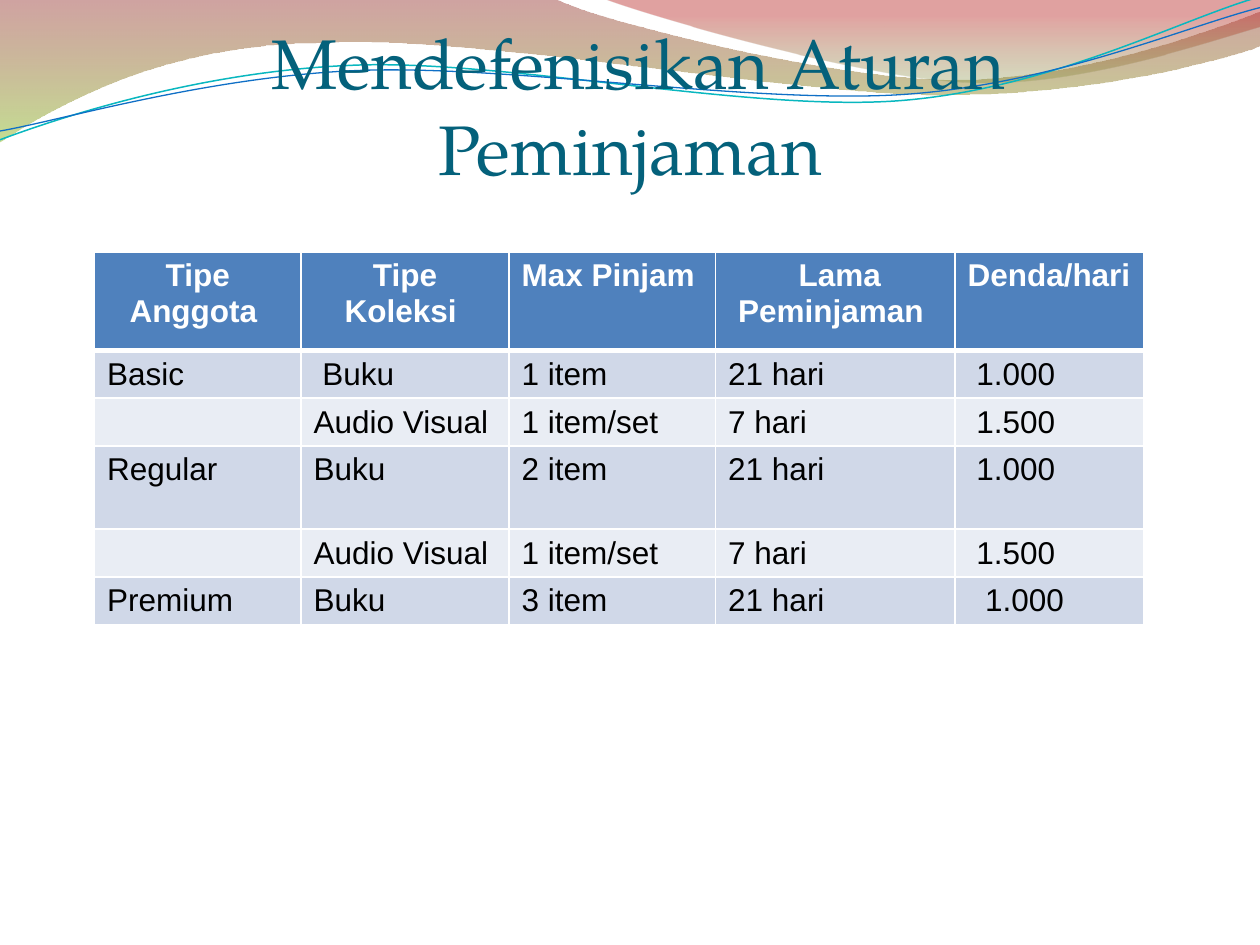
from math import cos, radians, sin
from pptx import Presentation
from pptx.dml.color import RGBColor
from pptx.enum.text import MSO_ANCHOR, PP_ALIGN
from pptx.oxml.ns import qn
from pptx.util import Inches, Pt
from lxml.etree import SubElement

HUES = {
    "title": "04617B", "head": "4F81BD", "odd": "D0D8E8", "even": "E9EDF4",
    "white": "FFFFFF", "black": "000000", "teal": "09B7BF", "blue": "0F6FC6",
    "brick": "973330", "lime": "95C238", "moss": "769537", "red": "BE3330",
}
BANDS = [
    ((-0.01, -0.01, 10.02, 1.14),
     [(0, 0), (4.4, -0.01), (4.76, 0.17, 6.63, 0.63, 7.58, 0.63),
      (8.53, 0.63, 9.58, 0.26, 10, 0.09), (10.01, 0.36),
      (9.83, 0.44, 8.7, 0.76, 7.46, 0.75), (6.22, 0.75, 3.82, 0.28, 2.57, 0.34),
      (1.29, 0.35, 0.46, 0.83, -0.01, 1.13), (0, 0)],
     [(0, "brick", 45), (1, "lime", 55)], 270),
    ((4.79, -0.01, 5.21, 0.7),
     [(4.79, -0.01), (5.09, 0.11, 6.82, 0.62, 7.69, 0.65),
      (8.55, 0.69, 9.61, 0.32, 10, 0.21), (10, 0), (4.79, -0.01)],
     [(0, "moss", 30), (0.8, "red", 45)], 90),
]
WAVES = [
    ((-0.02, 0.22, 10.02, 0.71),
     [(0, 1.11), (0.48, 0.93, 1.58, 0.57, 2.77, 0.52),
      (3.95, 0.46, 5.92, 0.89, 7.13, 0.8), (8.33, 0.71, 9.38, 0.15, 9.98, -0.02)],
     "teal", 0.85),
    ((-0.02, 0.3, 10.03, 0.58),
     [(0, 1.04), (0.47, 0.96, 1.64, 0.61, 2.83, 0.56),
      (4.03, 0.51, 5.97, 0.83, 7.17, 0.75), (8.36, 0.67, 9.41, 0.21, 10, 0.06)],
     "blue", 0.75),
]
TILT = 357.3
ROWS = [
    ["Tipe Anggota ", "Tipe Koleksi ", "Max Pinjam", " Lama Peminjaman ", "Denda/hari"],
    ["Basic", "Buku", "1 item", "21 hari", "1.000"],
    ["", "Audio Visual", "1 item/set", "7 hari", "1.500"],
    ["Regular", "Buku", "2 item", "21 hari", "1.000"],
    ["", "Audio Visual", "1 item/set", "7 hari", "1.500"],
    ["Premium", "Buku", "3 item", "21 hari", "1.000"],
]
WIDTHS = [1.64, 1.65, 1.64, 1.9, 1.5]
HEIGHTS = [0.78, 0.38, 0.38, 0.66, 0.38, 0.38]
CENTERED = {0, 1, 3}
INDENTS = {(1, 1): 0.17, (5, 4): 0.24, **{(row, 4): 0.17 for row in range(1, 5)}}


def hue(name):
    return RGBColor.from_string(HUES[name])


def turn(x, y, box, angle):
    left, top, width, height = box
    mid, waist = left + width / 2, top + height / 2
    c, s = cos(radians(angle)), sin(radians(angle))
    dx, dy = x - mid, y - waist
    return mid + dx * c - dy * s, waist + dx * s + dy * c


class Page:
    def __init__(self, slide):
        self.shapes = slide.shapes

    def style(self, run, font, size, color, bold=False):
        run.font.name = font
        run.font.size = Pt(size)
        run.font.bold = bold
        run.font.color.rgb = hue(color)

    def outline(self, box, path, tilt=0):
        left, top, width, height = box
        draft = self.shapes.build_freeform(0, 0)
        draft.add_line_segments([(Inches(width), Inches(height))], close=False)
        shape = draft.convert_to_shape()
        shape.left, shape.top = Inches(left), Inches(top)
        shape.rotation = tilt
        shape.shadow.inherit = False
        track = next(shape._element.iter(qn("a:path")))
        for node in list(track):
            track.remove(node)
        for i, part in enumerate(path):
            kind = "moveTo" if i == 0 else "lnTo" if len(part) == 2 else "cubicBezTo"
            node = SubElement(track, qn("a:" + kind))
            for x, y in zip(part[::2], part[1::2]):
                x, y = turn(x, y, box, -tilt)
                SubElement(node, qn("a:pt"), x=str(Inches(x - left)),
                           y=str(Inches(y - top)))
        if path[0] == path[-1]:
            SubElement(track, qn("a:close"))
        return shape

    def band(self, box, path, stops, angle):
        shape = self.outline(box, path)
        shape.line.fill.background()
        shape.fill.gradient()
        shape.fill.gradient_angle = angle
        for stop, (place, color, _) in zip(shape.fill.gradient_stops, stops):
            stop.position = place
            stop.color.rgb = hue(color)
        tints = shape._element.spPr.iter(qn("a:srgbClr"))
        for tint, (_, _, alpha) in zip(list(tints), stops):
            SubElement(tint, qn("a:alpha"), val=str(alpha * 1000))

    def wave(self, box, path, color, width):
        shape = self.outline(box, path, TILT)
        shape.fill.background()
        shape.line.color.rgb = hue(color)
        shape.line.width = Pt(width)

    def title(self, text, left, top, width, height):
        box = self.shapes.add_textbox(
            Inches(left), Inches(top), Inches(width), Inches(height))
        frame = box.text_frame
        frame.word_wrap = True
        frame.vertical_anchor = MSO_ANCHOR.BOTTOM
        frame.margin_left = frame.margin_right = frame.margin_bottom = 0
        frame.margin_top = Inches(0.05)
        para = frame.paragraphs[0]
        para.text = " "
        para.alignment = PP_ALIGN.CENTER
        self.style(para.runs[0], "Calibri", 44, "title")
        run = para.add_run()
        run.text = text
        self.style(run, "TeX Gyre Pagella", 40, "title")

    def border(self, cell):
        props = cell._tc.get_or_add_tcPr()
        for side in "LRTB":
            width = 3 if side == "B" else 1
            line = SubElement(props, qn("a:ln" + side), w=str(Pt(width)))
            fill = SubElement(line, qn("a:solidFill"))
            SubElement(fill, qn("a:srgbClr"), val=HUES["white"])

    def table(self, left, top):
        grid = self.shapes.add_table(
            len(ROWS), len(WIDTHS), Inches(left), Inches(top),
            Inches(sum(WIDTHS)), Inches(sum(HEIGHTS))).table
        for col, width in zip(grid.columns, WIDTHS):
            col.width = Inches(width)
        for row, height in zip(grid.rows, HEIGHTS):
            row.height = Inches(height)
        for i, texts in enumerate(ROWS):
            head = i == 0
            shade = "head" if head else "odd" if i % 2 else "even"
            for j, text in enumerate(texts):
                cell = grid.cell(i, j)
                if head:
                    self.border(cell)
                cell.fill.solid()
                cell.fill.fore_color.rgb = hue(shade)
                cell.margin_left = Inches(INDENTS.get((i, j), 0.1))
                cell.margin_bottom = Inches(0.02)
                cell.text_frame.text = text
                para = cell.text_frame.paragraphs[0]
                if head and j in CENTERED:
                    para.alignment = PP_ALIGN.CENTER
                for run in para.runs:
                    self.style(run, "Arial", 18, "white" if head else "black", head)


def main():
    deck = Presentation()
    deck.slide_width = Inches(10)
    deck.slide_height = Inches(7.5)
    page = Page(deck.slides.add_slide(deck.slide_layouts[6]))
    for band in BANDS:
        page.band(*band)
    for wave in WAVES:
        page.wave(*wave)
    page.title("Mendefenisikan Aturan Peminjaman", 0.5, 0.75, 9, 0.75)
    page.table(0.75, 2)
    deck.save("out.pptx")


if __name__ == "__main__":
    main()
